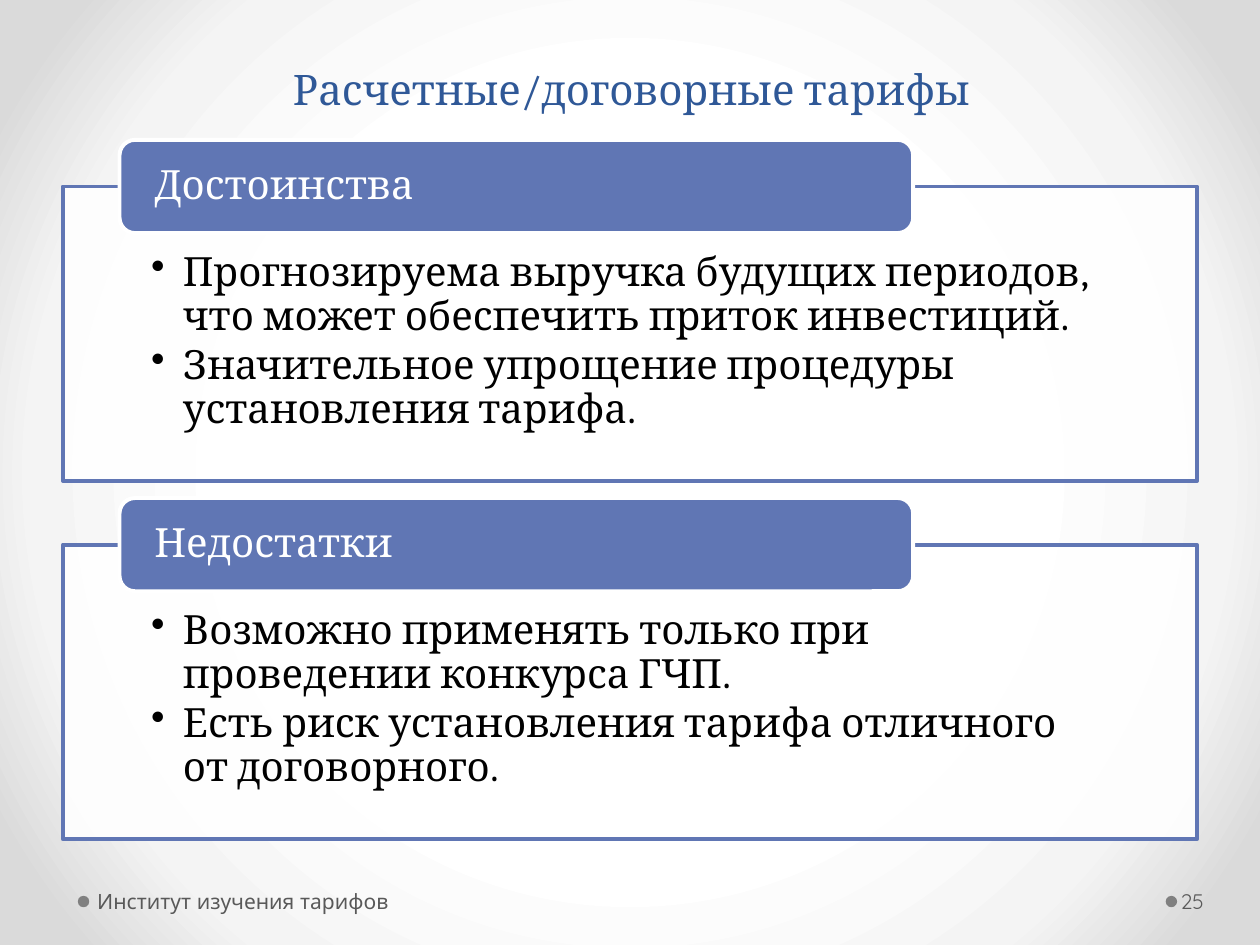
import pptx
import pptx.dml.color
import pptx.enum.shapes
import pptx.enum.text
import pptx.oxml
import pptx.oxml.ns
import pptx.util
from pptx.util import Cm

SHAPE = pptx.enum.shapes.MSO_SHAPE
ANCHOR = pptx.enum.text.MSO_ANCHOR
ALIGN = pptx.enum.text.PP_ALIGN
qn = pptx.oxml.ns.qn
NS = pptx.oxml.ns.nsdecls("a")


def rgb(value):
    return pptx.dml.color.RGBColor.from_string(value)


class Deck:
    SERIF, SANS = "Cambria", "Quicksand"
    BLUE, TITLE, WHITE, BLACK = "6076B4", "2F5897", "FFFFFF", "000000"
    GREY, DOT = "595959", "808080"

    def __init__(self):
        self.prs = pptx.Presentation()
        self.prs.slide_width, self.prs.slide_height = Cm(25.4), Cm(19.05)
        self.s = self.prs.slides.add_slide(self.prs.slide_layouts[6])

    def background(self, stops):
        """Radial gradient from (percent, colour) stops."""
        self.s.background.fill.gradient()
        old = self.s.element.find(".//" + qn("a:gradFill"))
        gs = "".join(f'<a:gs pos="{pos * 1000}"><a:srgbClr val="{c}"/></a:gs>'
                     for pos, c in stops)
        new = pptx.oxml.parse_xml(
            f'<a:gradFill {NS} rotWithShape="1"><a:gsLst>{gs}</a:gsLst>'
            '<a:path path="circle"><a:fillToRect l="50000" t="50000" '
            'r="50000" b="50000"/></a:path></a:gradFill>')
        old.getparent().replace(old, new)

    def shape(self, kind, box, fill, line=None, alpha=None):
        sp = self.s.shapes.add_shape(kind, *map(Cm, box))
        sp.shadow.inherit = False
        sp.fill.solid()
        sp.fill.fore_color.rgb = rgb(fill)
        if alpha:
            clr = sp.element.spPr.find(qn("a:solidFill"))[0]
            clr.append(pptx.oxml.parse_xml(
                f'<a:alpha {NS} val="{alpha * 1000}"/>'))
        if line:
            sp.line.color.rgb = rgb(line)
            sp.line.width = pptx.util.Pt(2.25)
        else:
            sp.line.fill.background()
        return sp

    def set_text(self, sp, lines, size, font, color, insets, anchor,
                 align=ALIGN.LEFT, spacing=None, after=None, bullet=False):
        tf = sp.text_frame
        tf.word_wrap = True
        tf.vertical_anchor = anchor
        (tf.margin_left, tf.margin_top,
         tf.margin_right, tf.margin_bottom) = map(Cm, insets)
        tf.text = "\n".join(lines)
        for p in tf.paragraphs:
            p.alignment = align
            if spacing:
                p.line_spacing = spacing
            if after:
                p.space_after = pptx.util.Pt(after)
            if bullet:
                pPr = p._p.get_or_add_pPr()
                pPr.set("marL", str(Cm(0.64)))
                pPr.set("indent", str(-Cm(0.64)))
                pPr.append(pptx.oxml.parse_xml(f'<a:buChar {NS} char="•"/>'))
            for r in p.runs:
                r.font.size = pptx.util.Pt(size)
                r.font.name = font
                r.font.color.rgb = rgb(color)

    def text(self, box, line, size, font, color, insets, anchor, **kw):
        sp = self.s.shapes.add_textbox(*map(Cm, box))
        self.set_text(sp, [line], size, font, color, insets, anchor, **kw)

    def section(self, top, heading, points):
        """Outlined panel of points with a heading tab over its top edge."""
        panel = self.shape(SHAPE.RECTANGLE, (1.27, top + 0.94, 22.86, 5.94),
                           self.WHITE, self.BLUE, alpha=90)
        self.set_text(panel, points, 23, self.SERIF, self.BLACK,
                      (1.78, 1.32, 1.78, 0.46), ANCHOR.TOP,
                      spacing=0.9, after=3.45, bullet=True)
        tab = self.shape(SHAPE.ROUNDED_RECTANGLE, (2.41, top, 16, 1.88),
                         self.BLUE, self.WHITE)
        self.set_text(tab, [heading], 23, self.SERIF, self.WHITE,
                      (0.61, 0, 0.61, 0), ANCHOR.MIDDLE, spacing=0.9)

    def footer(self, dot_left, left, width, line, insets):
        self.shape(SHAPE.OVAL, (dot_left, 18.06, 0.23, 0.23), self.DOT)
        self.text((left, 17.65, width, 1.02), line, 12, self.SANS, self.GREY,
                  insets, ANCHOR.MIDDLE)


def main():
    d = Deck()
    d.background([(50, "FFFFFF"), (76, "F4F4F4"), (92, "DADADA")])

    # Title
    d.text((1.3, 0.91, 22.86, 1.52), "Расчетные/договорные тарифы", 24,
           d.SERIF, d.TITLE, (0.25, 0.13, 0.25, 0.13), ANCHOR.BOTTOM,
           align=ALIGN.CENTER)

    # Advantages and drawbacks
    sections = [
        ("Достоинства",
         ["Прогнозируема выручка будущих периодов, что может обеспечить "
          "приток инвестиций.",
          "Значительное упрощение процедуры установления тарифа."]),
        ("Недостатки",
         ["Возможно применять только при проведении конкурса ГЧП.",
          "Есть риск установления тарифа отличного от договорного."]),
    ]
    for i, (heading, points) in enumerate(sections):
        d.section(2.82 + i * 7.22, heading, points)

    # Footer and page number
    d.footer(1.57, 1.83, 7.9, "Институт изучения тарифов",
             (0.13, 0.13, 0.25, 0.13))
    d.footer(23.5, 23.72, 1.55, "25", (0.08, 0.13, 0.13, 0.13))

    d.prs.save("out.pptx")


if __name__ == "__main__":
    main()
